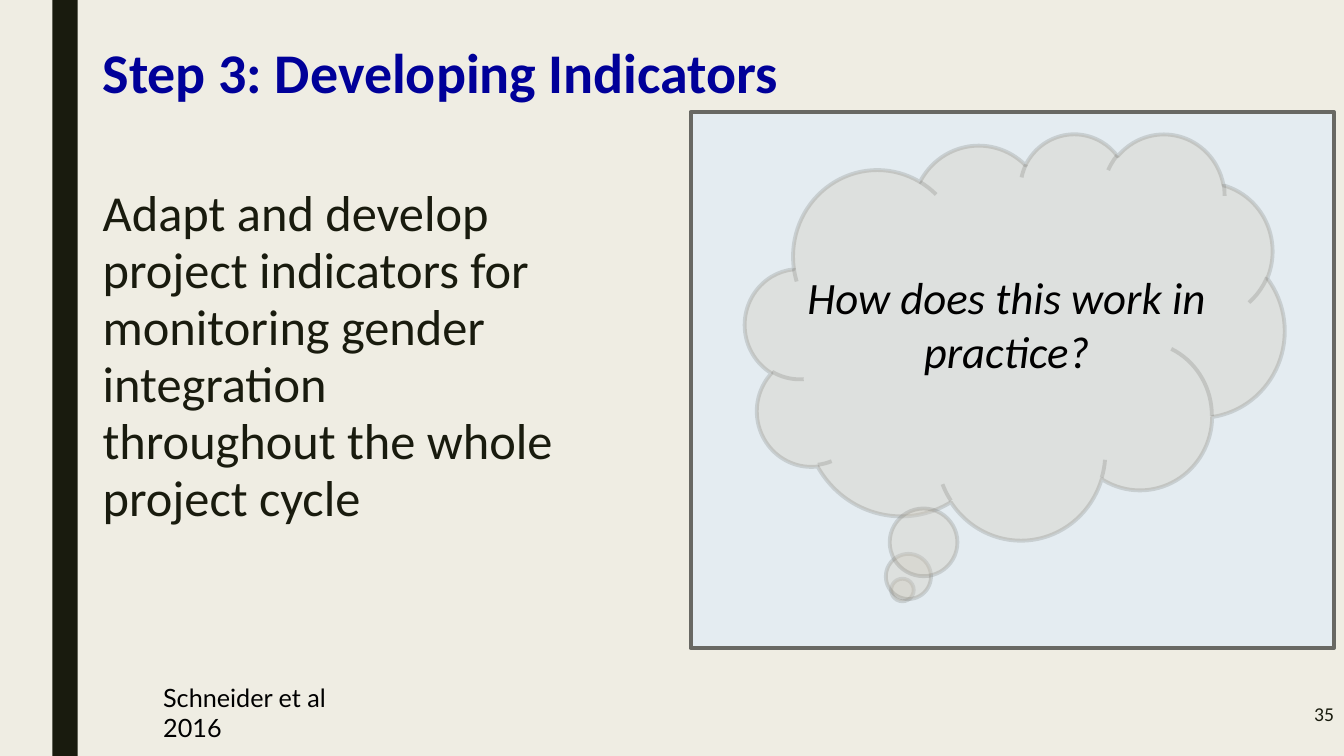
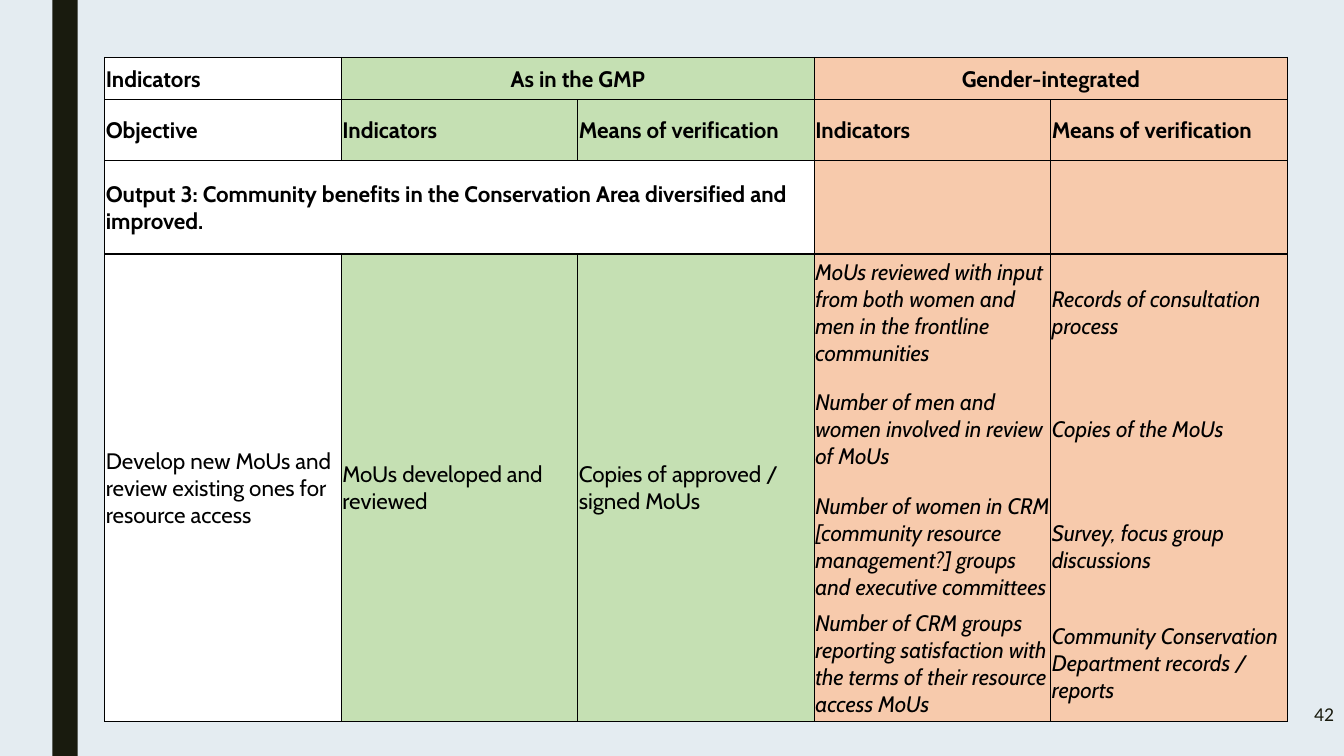
"""Build two slides on developing gender-integrated project indicators."""
from dataclasses import dataclass

from lxml import etree
from pptx import Presentation, util as u
from pptx.dml.color import RGBColor
from pptx.enum import shapes, text
from pptx.oxml.ns import qn


@dataclass(frozen=True)
class Theme:
    cream: str = "EFEDE3"
    pale_blue: str = "E4ECF1"
    ink: str = "191B0E"
    grey: str = "686863"
    cloud: str = "D1CBBE"
    navy: str = "000099"
    black: str = "000000"
    white: str = "FFFFFF"
    green: str = "C5E0B3"
    peach: str = "F7CAAC"
    font: str = "Calibri"
    source_font: str = "Lato"
    table_font: str = "Cabin"
    title: int = 40
    body: int = 36
    question: int = 32
    source: int = 18
    cell: int = 16
    number: int = 14
    outline: float = 2.75
    border: int = 1


T = Theme()

TITLE = "Step 3: Developing Indicators"
BODY = ("Adapt and develop project indicators for monitoring gender "
        "integration throughout the whole project cycle")
QUESTION = "How does this work in practice?"
SOURCE = "Schneider et al 2016"

ROWS = [
    ["Indicators", "As in the GMP", "", "Gender-integrated", ""],
    ["Objective", "Indicators", "Means of verification",
     "Indicators", "Means of verification"],
    ["Output 3: Community benefits in the Conservation Area diversified and improved.",
     "", "", "", ""],
    ["Develop new MoUs and review existing ones for resource access",
     "MoUs developed and reviewed",
     "Copies of approved / signed MoUs",
     "MoUs reviewed with input from both women and men in the frontline communities",
     "Records of consultation process"],
    ["", "", "", "Number of men and women involved in review of MoUs",
     "Copies of the MoUs"],
    ["", "", "",
     "Number of women in CRM [community resource management?] groups "
     "and executive committees",
     "Survey, focus group discussions"],
    ["", "", "",
     "Number of CRM groups reporting satisfaction with the terms of their "
     "resource access MoUs",
     "Community Conservation Department records / reports"],
]
ROW_HEIGHTS = [0.42, 0.6, 0.93] + [1.16] * 4
COLUMN_FILLS = [T.white, T.green, T.green, T.peach, T.peach]
COLUMN_WIDTH = 11.73 / len(COLUMN_FILLS)
FIRST_DETAIL, FIRST_GENDER = 3, 3
SPANS = [((0, 1), (0, 2)), ((0, 3), (0, 4)), ((2, 0), (2, 2))]
SPANS += [((FIRST_DETAIL, c), (len(ROWS) - 1, c)) for c in range(FIRST_GENDER)]


def box(*lengths):
    return [u.Inches(n) for n in lengths]


def write(tf, words, size, color=T.black, font=T.font, bold=False, italic=False,
          align=text.PP_ALIGN.LEFT, spacing=None, before=None, after=None):
    p = tf.paragraphs[0]
    p.alignment, p.line_spacing = align, spacing
    if before is not None:
        p.space_before = u.Pt(before)
    if after is not None:
        p.space_after = u.Pt(after)
    r = p.add_run()
    r.text = words
    r.font.name, r.font.size = font, u.Pt(size)
    r.font.bold, r.font.italic = bold, italic
    r.font.color.rgb = RGBColor.from_string(color)


def add_text(s, at, words, size, anchor=text.MSO_ANCHOR.TOP, right=0.1, **style):
    tf = s.shapes.add_textbox(*box(*at)).text_frame
    tf.word_wrap, tf.vertical_anchor = True, anchor
    tf.margin_right = u.Inches(right)
    write(tf, words, size, **style)


def set_alpha(fill_parent, percent):
    color = fill_parent.find(qn("a:solidFill"))[0]
    etree.SubElement(color, qn("a:alpha"), val=str(percent * 1000))


def add_shape(s, kind, at, fill, line=None, fill_alpha=None, line_alpha=None):
    sp = s.shapes.add_shape(kind, *box(*at))
    sp.shadow.inherit = False
    sp.fill.solid()
    sp.fill.fore_color.rgb = RGBColor.from_string(fill)
    if line:
        sp.line.color.rgb = RGBColor.from_string(line)
        sp.line.width = u.Pt(T.outline)
    else:
        sp.line.fill.background()
    if fill_alpha:
        set_alpha(sp.fill._xPr, fill_alpha)
    if line_alpha:
        set_alpha(sp.line._ln, line_alpha)


def add_slide(prs, background, number):
    s = prs.slides.add_slide(prs.slide_layouts[6])
    s.background.fill.solid()
    s.background.fill.fore_color.rgb = RGBColor.from_string(background)
    add_shape(s, shapes.MSO_SHAPE.RECTANGLE, (0.52, 0, 0.25, 7.5), T.ink)
    add_text(s, (12.34, 6.67, 0.99, 0.83), str(number), T.number, color=T.ink,
             anchor=text.MSO_ANCHOR.MIDDLE, align=text.PP_ALIGN.RIGHT)
    return s


def set_borders(cell, hidden):
    tc_pr = cell._tc.get_or_add_tcPr()
    for side in "LRTB":
        ln = etree.SubElement(tc_pr, qn(f"a:ln{side}"), w=str(u.Pt(T.border)))
        if side in hidden:
            etree.SubElement(ln, qn("a:noFill"))
        else:
            fill = etree.SubElement(ln, qn("a:solidFill"))
            etree.SubElement(fill, qn("a:srgbClr"), val=T.black)


def hidden_sides(row, column):
    if row < FIRST_DETAIL or column < FIRST_GENDER:
        return ""
    return ("T" if row > FIRST_DETAIL else "") + ("B" if row < len(ROWS) - 1 else "")


def add_indicator_table(s):
    at = (1.04, 0.57, 11.73, sum(ROW_HEIGHTS))
    table = s.shapes.add_table(len(ROWS), len(COLUMN_FILLS), *box(*at)).table
    table.first_row = table.horz_banding = False
    for column in table.columns:
        column.width = u.Inches(COLUMN_WIDTH)
    for row, height in zip(table.rows, ROW_HEIGHTS):
        row.height = u.Inches(height)
    for first, last in SPANS:
        table.cell(*first).merge(table.cell(*last))
    for i, words in enumerate(ROWS):
        for j, fill in enumerate(COLUMN_FILLS):
            cell = table.cell(i, j)
            cell.vertical_anchor = text.MSO_ANCHOR.MIDDLE
            cell.margin_left = cell.margin_right = cell.margin_top = u.Inches(0.01)
            cell.margin_bottom = 0
            set_borders(cell, hidden_sides(i, j))
            cell.fill.solid()
            cell.fill.fore_color.rgb = RGBColor.from_string(fill)
            if words[j]:
                centred = i == 0 and cell.is_merge_origin
                write(cell.text_frame, words[j], T.cell, font=T.table_font,
                      bold=i < FIRST_DETAIL,
                      italic=i >= FIRST_DETAIL and j >= FIRST_GENDER,
                      align=text.PP_ALIGN.CENTER if centred else text.PP_ALIGN.LEFT)


def build_step(prs):
    s = add_slide(prs, T.cream, 35)
    add_shape(s, shapes.MSO_SHAPE.RECTANGLE, (6.85, 1.11, 6.38, 5.32),
              T.pale_blue, line=T.grey)
    add_text(s, (0.92, 0.4, 11.94, 1.4), TITLE, T.title, color=T.navy,
             bold=True, spacing=0.89)
    add_text(s, (0.92, 1.8, 4.76, 4.22), BODY, T.body, color=T.ink,
             spacing=0.94, before=10, after=2)
    add_text(s, (1.52, 6.72, 2.44, 0.4), SOURCE, T.source, font=T.source_font,
             right=0.5)
    add_shape(s, shapes.MSO_SHAPE.CLOUD_CALLOUT, (7.39, 1.32, 5.35, 4.03),
              T.cloud, line=T.grey, fill_alpha=36, line_alpha=22)
    add_text(s, (7.7, 2.63, 4.57, 1.18), QUESTION, T.question, italic=True,
             align=text.PP_ALIGN.CENTER)


def main():
    prs = Presentation()
    prs.slide_width, prs.slide_height = box(13.33, 7.5)
    build_step(prs)
    add_indicator_table(add_slide(prs, T.pale_blue, 42))
    prs.save("out.pptx")


if __name__ == "__main__":
    main()
